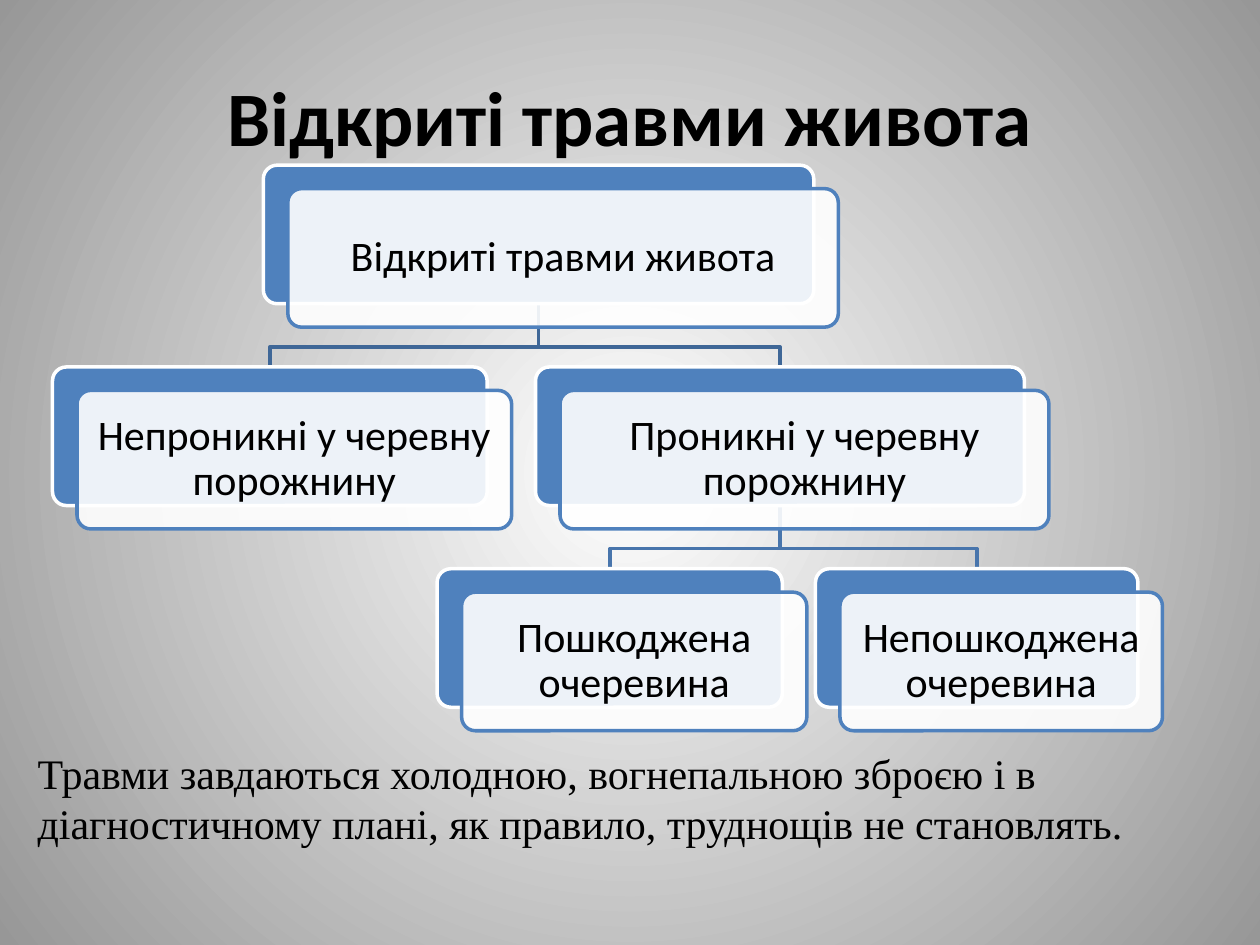
from dataclasses import dataclass

import lxml.etree
import pptx
import pptx.dml.color
import pptx.enum.shapes
import pptx.enum.text
import pptx.oxml.ns
import pptx.util

Pt = pptx.util.Pt
qn = pptx.oxml.ns.qn


@dataclass(frozen=True)
class Theme:
    text: str = "000000"
    accent: str = "4F81BD"
    white: str = "FFFFFF"
    edge: str = "979797"
    upper_link: str = "3F6797"
    lower_link: str = "4875AC"
    heading_font: str = "Calibri"
    note_font: str = "Times New Roman"
    title_size: int = 44
    text_size: int = 24
    line_width: int = 2
    card_opacity: int = 90


THEME = Theme()
CARD_HEIGHT = 79.2
OFFSET_X, OFFSET_Y = 14, 13.4
LEVEL_TOPS = (94.4, 209.7, 325)
ELBOW_DROP = 24.6

CARDS = {
    "root": ("Відкриті травми живота", 0, 150.5, 314.6),
    "closed": ("Непроникні у черевну порожнину", 1, 30, 248.4),
    "open": ("Проникні у черевну порожнину", 1, 306, 279.4),
    "damaged": ("Пошкоджена очеревина", 2, 249.8, 197.3),
    "intact": ("Непошкоджена очеревина", 2, 466, 184.3),
}
LINKS = (
    ("open", "intact", THEME.lower_link),
    ("open", "damaged", THEME.lower_link),
    ("root", "open", THEME.upper_link),
    ("root", "closed", THEME.upper_link),
)


def color(code):
    return pptx.dml.color.RGBColor.from_string(code)


def write(paragraph, text, font, size, bold=False):
    span = paragraph.add_run()
    span.text = text
    span.font.name = font
    span.font.size = Pt(size)
    span.font.bold = bold
    span.font.color.rgb = color(THEME.text)


def paint_background(page):
    fill = page.background.fill
    fill.gradient()
    for stop, code in zip(fill.gradient_stops, (THEME.white, THEME.edge)):
        stop.color.rgb = color(code)
    gradient = page.element.find(".//" + qn("a:gradFill"))
    gradient.remove(gradient.find(qn("a:lin")))
    radial = lxml.etree.SubElement(gradient, qn("a:path"), path="circle")
    center = dict.fromkeys("ltrb", "50000")
    lxml.etree.SubElement(radial, qn("a:fillToRect"), **center)


def add_title(page, text):
    title = page.shapes.title
    title.left, title.top, title.width, title.height = map(Pt, (20, 12.2, 680.4, 108))
    frame = title.text_frame
    frame.vertical_anchor = pptx.enum.text.MSO_ANCHOR.MIDDLE
    para = frame.paragraphs[0]
    para.alignment = pptx.enum.text.PP_ALIGN.CENTER
    write(para, text, THEME.heading_font, THEME.title_size, True)


def add_note(page, text):
    box = page.shapes.add_textbox(Pt(14.4), Pt(423.4), Pt(705.6), Pt(94.3))
    box.text_frame.word_wrap = True
    write(box.text_frame.paragraphs[0], text, THEME.note_font, THEME.text_size)


def add_link(page, parent, child, line_color):
    _, parent_level, parent_left, parent_width = CARDS[parent]
    _, child_level, child_left, child_width = CARDS[child]
    start_x = parent_left + parent_width / 2
    end_x = child_left + child_width / 2
    start_y = LEVEL_TOPS[parent_level] + CARD_HEIGHT
    bend_y = start_y + ELBOW_DROP
    corners = ((start_x, bend_y), (end_x, bend_y), (end_x, LEVEL_TOPS[child_level]))
    outline = page.shapes.build_freeform(Pt(start_x), Pt(start_y))
    outline.add_line_segments([(Pt(x), Pt(y)) for x, y in corners], close=False)
    link = outline.convert_to_shape()
    link.shadow.inherit = False
    link.fill.background()
    link.line.color.rgb = color(line_color)
    link.line.width = Pt(THEME.line_width)


def add_plate(page, left, top, width, fill_color, line_color):
    plate = page.shapes.add_shape(
        pptx.enum.shapes.MSO_SHAPE.ROUNDED_RECTANGLE,
        Pt(left), Pt(top), Pt(width), Pt(CARD_HEIGHT),
    )
    plate.adjustments[0] = 0.1
    plate.shadow.inherit = False
    plate.fill.solid()
    plate.fill.fore_color.rgb = color(fill_color)
    plate.line.color.rgb = color(line_color)
    plate.line.width = Pt(THEME.line_width)
    return plate


def add_card(page, text, level, left, width):
    top = LEVEL_TOPS[level]
    add_plate(page, left, top, width, THEME.accent, THEME.white)
    front = add_plate(
        page, left + OFFSET_X, top + OFFSET_Y, width, THEME.white, THEME.accent
    )
    fill_color = front.element.spPr.find(qn("a:solidFill"))[0]
    opacity = str(THEME.card_opacity * 1000)
    lxml.etree.SubElement(fill_color, qn("a:alpha"), val=opacity)
    frame = front.text_frame
    frame.word_wrap = True
    frame.vertical_anchor = pptx.enum.text.MSO_ANCHOR.MIDDLE
    frame.margin_left = frame.margin_right = Pt(7.2)
    frame.margin_top = frame.margin_bottom = Pt(7.2)
    para = frame.paragraphs[0]
    para.alignment = pptx.enum.text.PP_ALIGN.CENTER
    para.line_spacing = 0.9
    write(para, text, THEME.heading_font, THEME.text_size)


def main():
    deck = pptx.Presentation()
    deck.slide_width, deck.slide_height = Pt(720), Pt(540)
    page = deck.slides.add_slide(deck.slide_layouts.get_by_name("Title Only"))
    paint_background(page)
    add_title(page, "Відкриті травми живота")
    add_note(
        page,
        "Травми завдаються холодною, вогнепальною зброєю і в діагностичному "
        "плані, як правило, труднощів не становлять.",
    )
    for link in LINKS:
        add_link(page, *link)
    for card in CARDS.values():
        add_card(page, *card)
    deck.save("out.pptx")


if __name__ == "__main__":
    main()
